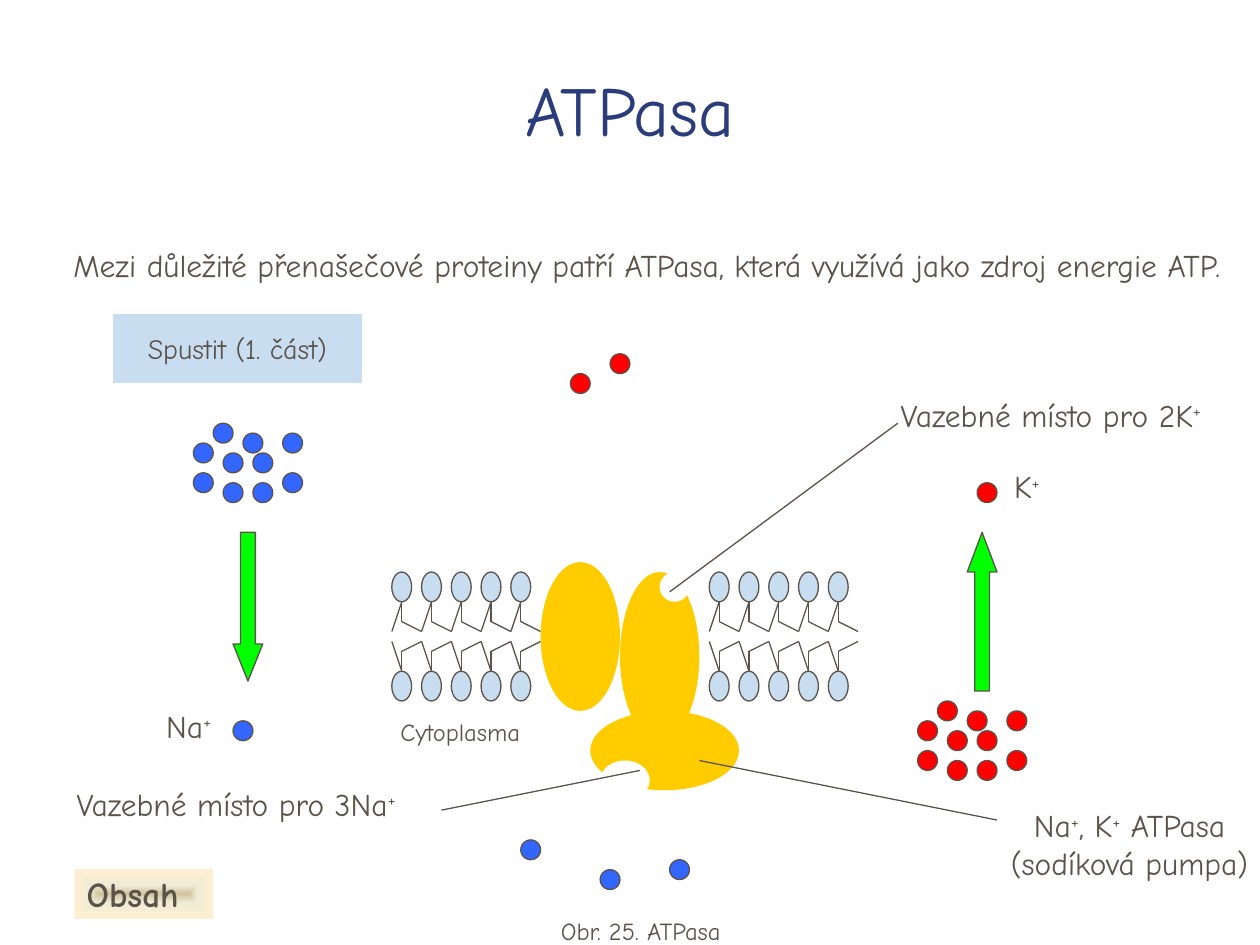
from typing import NamedTuple

from lxml.etree import SubElement
from pptx import Presentation
from pptx.dml.color import RGBColor
from pptx.enum.shapes import MSO_CONNECTOR, MSO_SHAPE
from pptx.enum.text import MSO_ANCHOR, PP_ALIGN
from pptx.oxml import parse_xml
from pptx.oxml.ns import nsdecls, qn
from pptx.util import Inches, Mm, Pt

FONT = "Comic Neue"
INK, NAVY, PALE = "5B5249", "2A3D7A", "C9DDF1"
RED, BLUE, GREEN, GOLD, WHITE = "FF0000", "3366FF", "00FF00", "FFCC00", "FFFFFF"
LEFT, MID = PP_ALIGN.LEFT, PP_ALIGN.CENTER

deck = Presentation()
deck.slide_width, deck.slide_height = Inches(10), Inches(7.5)
slide = deck.slides.add_slide(deck.slide_layouts[6])
shapes = slide.shapes

# The drawing sits on a 2 mm grid that starts at the first lipid head.
STEP, LEFT0, TOP0 = Mm(2), Inches(3.11), Inches(4.54)


class Cell(NamedTuple):
    col: float
    row: float
    cols: float = 2
    rows: float = 2


class Label(NamedTuple):
    """Text with its frame in percent of the slide; every + is raised."""
    text: str
    left: float
    top: float
    width: float
    height: float
    size: int = 18
    align: PP_ALIGN = LEFT
    anchor: MSO_ANCHOR = MSO_ANCHOR.TOP
    color: str = INK
    bold: bool = False
    wrap: bool = False


class Arrow(NamedTuple):
    kind: MSO_SHAPE
    cell: Cell
    head: float


def rgb(code: str) -> RGBColor:
    return RGBColor.from_string(code)


def place(col: float, row: float) -> tuple[int, int]:
    return int(LEFT0 + col * STEP), int(TOP0 + row * STEP)


def frame(label: Label) -> tuple[int, ...]:
    wide, high = deck.slide_width / 100, deck.slide_height / 100
    return (int(label.left * wide), int(label.top * high),
            int(label.width * wide), int(label.height * high))


def paint(shape, fill: str, edge: bool) -> None:
    shape.shadow.inherit = False
    shape.fill.solid()
    shape.fill.fore_color.rgb = rgb(fill)
    if edge:
        shape.line.color.rgb = rgb(INK)
        shape.line.width = Pt(0.75)
    else:
        shape.line.fill.background()


def draw(kind: MSO_SHAPE, cell: Cell, fill: str, edge: bool = True):
    shape = shapes.add_shape(kind, *place(cell.col, cell.row),
                             int(cell.cols * STEP), int(cell.rows * STEP))
    paint(shape, fill, edge)
    return shape


def oval(cell: Cell, fill: str, edge: bool = True) -> None:
    draw(MSO_SHAPE.OVAL, cell, fill, edge)


def rule(start: tuple[float, float], end: tuple[float, float]) -> None:
    line = shapes.add_connector(MSO_CONNECTOR.STRAIGHT, *place(*start), *place(*end))
    line.line.color.rgb = rgb(INK)
    line.line.width = Pt(0.75)
    SubElement(line._element.spPr, qn("a:effectLst"))


def lipid(col: float, flip: bool) -> None:
    """Draw a head with its two tails, mirrored in the lower layer."""
    def at(x: float, y: float) -> tuple[float, float]:
        return col + x, 13 - y if flip else y

    oval(Cell(col, 10 if flip else 0, 2, 3), PALE)
    rule(at(1, 3), at(0, 6))
    rule(at(1, 3), at(1, 5))
    rule(at(1, 5), at(3, 6))


def write(shape, label: Label) -> None:
    box = shape.text_frame
    box.word_wrap = label.wrap
    box.vertical_anchor = label.anchor
    box.text = label.text.split("\n")[0]
    for _ in label.text.split("\n")[1:]:
        box.add_paragraph()
    for para, text in zip(box.paragraphs, label.text.split("\n")):
        para.clear()
        para.alignment = label.align
        for part in text.replace("+", "|+|").split("|"):
            if not part:
                continue
            run = para.add_run()
            run.text = part
            run.font.name, run.font.size = FONT, Pt(label.size)
            run.font.bold = label.bold
            run.font.color.rgb = rgb(label.color)
            if part == "+":
                run.font._element.set("baseline", "30000")


def button(label: Label):
    shape = shapes.add_shape(MSO_SHAPE.ACTION_BUTTON_CUSTOM, *frame(label))
    paint(shape, PALE, False)
    write(shape, label)
    return shape


def glow(shape, stops: list[tuple[int, str]]) -> None:
    """Replace the solid fill with a gradient spreading from the centre."""
    marks = "".join(f'<a:gs pos="{pos * 1000}"><a:srgbClr val="{code}"/></a:gs>'
                    for pos, code in stops)
    fill = parse_xml(
        f'<a:gradFill {nsdecls("a")}><a:gsLst>{marks}</a:gsLst><a:path path="rect">'
        '<a:fillToRect l="50000" t="50000" r="50000" b="50000"/></a:path></a:gradFill>')
    props = shape._element.spPr
    props.replace(props.find(qn("a:solidFill")), fill)


for side in (0, 32):
    for turn in range(5):
        for flip in (False, True):
            lipid(side + 3 * turn, flip)

for lobe in (Cell(15, -1, 8, 15), Cell(23, 0, 8, 17), Cell(20, 14, 15, 8)):
    oval(lobe, GOLD, False)
for site in (Cell(27, 0, 3, 3), Cell(21, 19, 5, 4)):
    oval(site, WHITE, False)

CLUSTER = [(2, 0), (9, 5), (0, 5), (9, 1), (6, 6),
           (3, 6), (5, 1), (0, 2), (3, 3), (6, 3)]
IONS = {
    RED: ((53, 13), [(59, -9), (18, -20), (22, -22)]),
    BLUE: ((-20, -15), [(-16, 15), (13, 27), (21, 30), (28, 29)]),
}
for tint, ((col, row), single) in IONS.items():
    for x, y in [(col + dx, row + dy) for dx, dy in CLUSTER] + single:
        oval(Cell(x, y), tint)

for arrow in (Arrow(MSO_SHAPE.UP_ARROW, Cell(58, -4, 3, 16), 1.33),
              Arrow(MSO_SHAPE.DOWN_ARROW, Cell(-16, -4, 3, 15), 1.25)):
    shape = draw(arrow.kind, arrow.cell, GREEN)
    shape.adjustments[0], shape.adjustments[1] = 0.5, arrow.head

for start, end in (((28, 2), (51, -15)), ((25, 20), (5, 24)), ((31, 19), (61, 25))):
    rule(start, end)

LABELS = [
    Label("ATPasa", 0, 4, 100, 12.53, 40, MID, MSO_ANCHOR.BOTTOM, NAVY, wrap=True),
    Label("Mezi důležité přenašečové proteiny patří ATPasa, "
          "která využívá jako zdroj energie ATP.",
          2.7, 23.33, 97.3, 9.33, 18, MID, MSO_ANCHOR.MIDDLE, wrap=True),
    Label("K+", 79.5, 48.8, 4.3, 5.33),
    Label("Na+", 12.2, 74.13, 6.1, 5.33),
    Label("Vazebné místo pro 2K+", 70.5, 41.2, 28.8, 5.33),
    Label("Vazebné místo pro 3Na+", 5.1, 82.4, 30.6, 5.33),
    Label("Na+, K+ ATPasa\n(sodíková pumpa)", 78.8, 84.67, 21.7, 9.33, align=MID),
    Label("Obr. 25. ATPasa", 20.9, 96.27, 59.9, 4.4, 14, MID, wrap=True),
    Label("Cytoplasma", 30.8, 75.2, 12.2, 4.4, 14),
]
for label in LABELS:
    write(shapes.add_textbox(*frame(label)), label)

button(Label("Spustit (1. část)", 9, 33.2, 19.7, 7.33, 16, MID, MSO_ANCHOR.MIDDLE))
index = button(Label("Obsah", 5.9, 92, 11, 5.2, 20, LEFT, MSO_ANCHOR.MIDDLE, bold=True))
glow(index, [(0, "D1C39F"), (35, "F0EBD5"), (100, "FFEFD1")])

deck.save("out.pptx")
